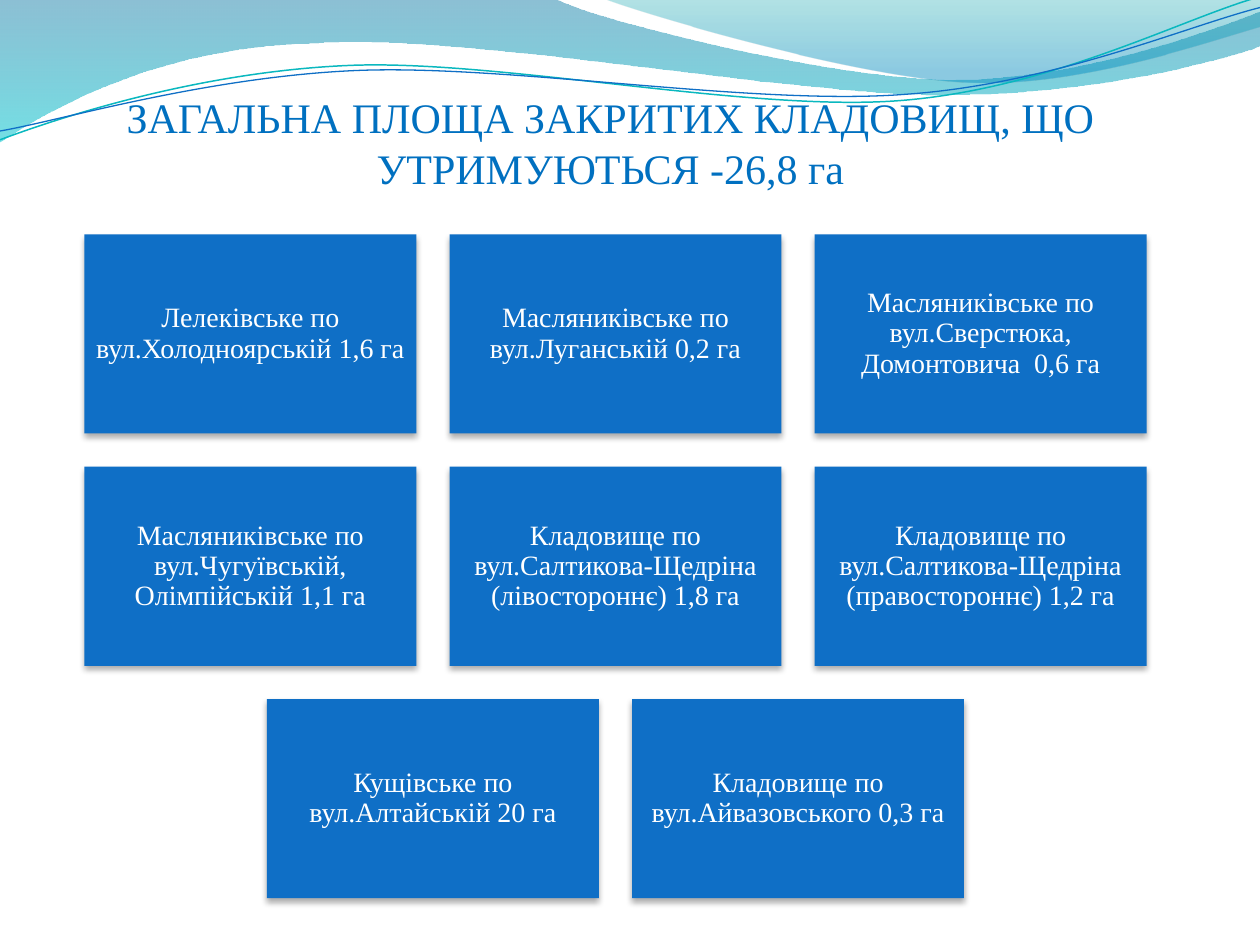
from lxml.etree import SubElement
from pptx import Presentation
from pptx.dml.color import RGBColor as RGB
from pptx.enum.shapes import MSO_SHAPE as Preset
from pptx.enum.text import MSO_ANCHOR as Anchor, PP_ALIGN as Align
from pptx.oxml.ns import qn
from pptx.util import Inches, Pt

THEME = {
    "font": "Times New Roman",
    "title_size": 24, "card_size": 16,
    "title": "0070C0", "card": "0F6FC6", "card_text": "FFFFFF", "shadow": "000000",
}

# Each wave: start point, then straight (2 numbers) or Bézier (6 numbers) segments,
# then gradient stops as (position, colour, opacity in percent).
WAVES = [
    ((0, 0),
     [(4.4, -0.01), (4.76, 0.17, 6.64, 0.63, 7.58, 0.63),
      (8.53, 0.63, 9.58, 0.26, 10, 0.09), (10.01, 0.36),
      (9.83, 0.44, 8.7, 0.76, 7.46, 0.75), (6.22, 0.75, 3.82, 0.28, 2.57, 0.34),
      (1.29, 0.36, 0.46, 0.83, -0.01, 1.13)],
     [(0, "0074A1", 45), (1, "00C6CF", 55)]),
    ((4.79, -0.01),
     [(5.09, 0.11, 6.82, 0.62, 7.69, 0.65), (8.56, 0.69, 9.61, 0.32, 10, 0.21), (10, 0)],
     [(0, "00A1A9", 30), (0.8, "008BBF", 45)]),
]
# Each thin line: start point, segments, colour, width.
LINES = [
    ((0, 1.11),
     [(0.48, 0.93, 1.58, 0.57, 2.77, 0.52), (3.95, 0.47, 5.93, 0.89, 7.13, 0.8),
      (8.33, 0.71, 9.38, 0.15, 9.98, -0.02)], "0AB8BF", 0.85),
    ((0, 1.04),
     [(0.47, 0.96, 1.64, 0.61, 2.83, 0.56), (4.03, 0.51, 5.97, 0.84, 7.17, 0.75),
      (8.36, 0.67, 9.41, 0.21, 10, 0.06)], "0F6FC6", 0.75),
]
TITLE = "ЗАГАЛЬНА ПЛОЩА ЗАКРИТИХ КЛАДОВИЩ, ЩО УТРИМУЮТЬСЯ -26,8 га"
CARD_ROWS = [
    ["Лелеківське по вул.Холодноярській 1,6 га",
     "Масляниківське по вул.Луганській 0,2 га",
     "Масляниківське по вул.Сверстюка, Домонтовича  0,6 га"],
    ["Масляниківське по вул.Чугуївській, Олімпійській 1,1 га",
     "Кладовище по вул.Салтикова-Щедріна (лівостороннє) 1,8 га",
     "Кладовище по вул.Салтикова-Щедріна (правостороннє) 1,2 га"],
    ["Кущівське по вул.Алтайській 20 га",
     "Кладовище по вул.Айвазовського 0,3 га"],
]


def trace_outline(shapes, start, segments, close):
    """Build a freeform, then join the points of each 6-number segment into one Bézier."""
    builder = shapes.build_freeform(Inches(start[0]), Inches(start[1]))
    builder.add_line_segments(
        [(Inches(x), Inches(y)) for segment in segments
         for x, y in zip(segment[::2], segment[1::2])], close=close)
    shape = builder.convert_to_shape()
    shape.shadow.inherit = False
    steps = iter(list(shape._element.spPr.iter(qn("a:lnTo"))))
    for segment in segments:
        first = next(steps)
        if len(segment) == 6:
            curve = SubElement(first.getparent(), qn("a:cubicBezTo"))
            first.addprevious(curve)
            for step in (first, next(steps), next(steps)):
                curve.append(step[0])
                step.getparent().remove(step)
    return shape


def write_text(shape, text, size, color, anchor, margins, line_spacing=1.0):
    frame = shape.text_frame
    frame.word_wrap = True
    frame.vertical_anchor = anchor
    frame.margin_left = frame.margin_right = Inches(margins[0])
    frame.margin_top = frame.margin_bottom = Inches(margins[1])
    paragraph = frame.paragraphs[0]
    paragraph.alignment = Align.CENTER
    paragraph.line_spacing = line_spacing
    run = paragraph.add_run()
    run.text = text
    run.font.name = THEME["font"]
    run.font.size = Pt(size)
    run.font.color.rgb = RGB.from_string(color)


presentation = Presentation()
presentation.slide_width, presentation.slide_height = Inches(10), Inches(7.5)
slide = presentation.slides.add_slide(presentation.slide_layouts[6])
shapes = slide.shapes

# Waves along the top edge
for start, segments, stops in WAVES:
    wave = trace_outline(shapes, start, segments, close=True)
    wave.line.fill.background()
    wave.fill.gradient()
    wave.fill.gradient_angle = 270
    for stop, (position, color, _) in zip(wave.fill.gradient_stops, stops):
        stop.position = position
        stop.color.rgb = RGB.from_string(color)
    for element, (_, _, opacity) in zip(wave._element.spPr.iter(qn("a:srgbClr")), stops):
        SubElement(element, qn("a:alpha"), val=str(opacity * 1000))

for start, segments, color, width in LINES:
    line = trace_outline(shapes, start, segments, close=False)
    line.fill.background()
    line.line.color.rgb = RGB.from_string(color)
    line.line.width = Pt(width)

# Title
title = shapes.add_textbox(Inches(0.28), Inches(0.68), Inches(9.13), Inches(1.31))
write_text(title, TITLE, THEME["title_size"], THEME["title"], Anchor.TOP, (0.1, 0.05))

# Cards: three columns with gaps of a tenth of a card, each row centred
area_left, area_top, area_width = 0.67, 1.86, 8.43
card_width = area_width / 3.2
card_height = 0.6 * card_width
gap = 0.1 * card_width
for row, names in enumerate(CARD_ROWS):
    row_width = len(names) * (card_width + gap) - gap
    row_left = area_left + (area_width - row_width) / 2
    for column, name in enumerate(names):
        card = shapes.add_shape(
            Preset.RECTANGLE,
            Inches(row_left + column * (card_width + gap)),
            Inches(area_top + row * (card_height + gap)),
            Inches(card_width), Inches(card_height))
        card.fill.solid()
        card.fill.fore_color.rgb = RGB.from_string(THEME["card"])
        card.line.fill.background()
        card.shadow.inherit = False
        shadow = SubElement(card._element.spPr.find(qn("a:effectLst")), qn("a:outerShdw"),
                            blurRad=str(Pt(3.5)), dist=str(Pt(2.2)), dir="5400000",
                            rotWithShape="0")
        shadow_color = SubElement(shadow, qn("a:srgbClr"), val=THEME["shadow"])
        SubElement(shadow_color, qn("a:alpha"), val="32000")
        write_text(card, name, THEME["card_size"], THEME["card_text"], Anchor.MIDDLE,
                   (0.07, 0.07), line_spacing=0.9)

presentation.save("out.pptx")
